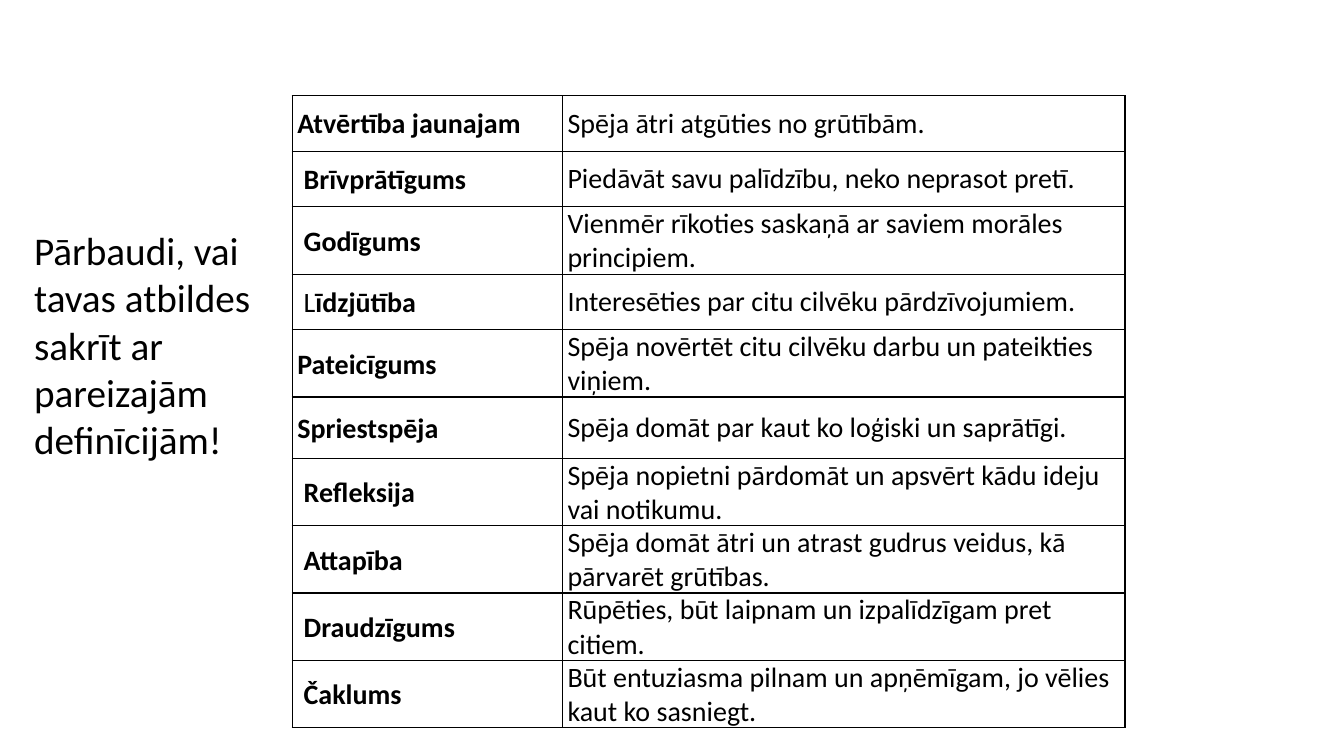
"""Build the slide that pairs ten character strengths with their definitions."""
from lxml.etree import SubElement
from pptx import Presentation
from pptx.dml.color import RGBColor
from pptx.enum.text import MSO_ANCHOR, MSO_AUTO_SIZE
from pptx.oxml.ns import qn
from pptx.util import Pt

PROMPT = "Pārbaudi, vai tavas atbildes sakrīt ar pareizajām definīcijām!"
SINGLE, MEDIUM, DOUBLE = 39.7, 43.9, 48.1
INDENT = 4.5
STRENGTHS = [
    ("", "Atvērtība jaunajam", "Spēja ātri atgūties no grūtībām.", 0, SINGLE),
    ("", "Brīvprātīgums", "Piedāvāt savu palīdzību, neko neprasot pretī.", INDENT, SINGLE),
    ("", "Godīgums", "Vienmēr rīkoties saskaņā ar saviem morāles principiem.", INDENT, DOUBLE),
    ("L", "īdzjūtība", "Interesēties par citu cilvēku pārdzīvojumiem.", INDENT, SINGLE),
    ("", "Pateicīgums", "Spēja novērtēt citu cilvēku darbu un pateikties viņiem.", 0, DOUBLE),
    ("", "Spriestspēja", "Spēja domāt par kaut ko loģiski un saprātīgi.", 0, MEDIUM),
    ("", "Refleksija", "Spēja nopietni pārdomāt un apsvērt kādu ideju vai notikumu.", INDENT, DOUBLE),
    ("", "Attapība", "Spēja domāt ātri un atrast gudrus veidus, kā pārvarēt grūtības.", INDENT, DOUBLE),
    ("", "Draudzīgums", "Rūpēties, būt laipnam un izpalīdzīgam pret citiem.", INDENT, DOUBLE),
    ("", "Čaklums", "Būt entuziasma pilnam un apņēmīgam, jo vēlies kaut ko sasniegt.", INDENT, DOUBLE),
]
COLUMNS = (193, 401.8)
COLORS = {"text": "000000", "border": "000000"}
CELL_FORMAT = {
    "vertical_anchor": MSO_ANCHOR.MIDDLE,
    "margin_left": Pt(3.6),
    "margin_right": Pt(3.6),
    "margin_top": 0,
    "margin_bottom": 0,
}
TABLE_FLAGS = {"first_row": False, "horz_banding": False}


def add_span(para, text, size, bold=False):
    """Add one formatted run to a paragraph."""
    span = para.add_run()
    span.text = text
    for name, value in {"name": "Calibri", "size": Pt(size), "bold": bold}.items():
        setattr(span.font, name, value)
    span.font.color.rgb = RGBColor.from_string(COLORS["text"])


def add_borders(cell):
    """Draw a thin line on every side of a cell."""
    properties = cell._tc.get_or_add_tcPr()
    for position, side in enumerate(("lnL", "lnR", "lnT", "lnB")):
        line = SubElement(properties, qn(f"a:{side}"), w=str(Pt(1)))
        fill = SubElement(line, qn("a:solidFill"))
        SubElement(fill, qn("a:srgbClr"), val=COLORS["border"])
        properties.insert(position, line)


def fill_cell(cell, spans, indent=0, spacing=None):
    """Format a cell and write its runs."""
    for name, value in CELL_FORMAT.items():
        setattr(cell, name, value)
    cell.fill.background()
    add_borders(cell)
    para = cell.text_frame.paragraphs[0]
    para.line_spacing = spacing
    if indent:
        para._p.get_or_add_pPr().set("marL", str(Pt(indent)))
    for text, bold in spans:
        if text:
            add_span(para, text, 20, bold)


def add_prompt(page):
    """Place the instruction to the left of the table."""
    box = page.shapes.add_textbox(Pt(17.3), Pt(158.4), Pt(179.3), Pt(177.1))
    for name, value in {"word_wrap": True, "auto_size": MSO_AUTO_SIZE.SHAPE_TO_FIT_TEXT}.items():
        setattr(box.text_frame, name, value)
    add_span(box.text_frame.paragraphs[0], PROMPT, 28)


def add_definitions(page):
    """Place the table of strengths and definitions."""
    height = sum(strength[-1] for strength in STRENGTHS)
    table = page.shapes.add_table(
        len(STRENGTHS), len(COLUMNS), Pt(208.8), Pt(68.4), Pt(sum(COLUMNS)), Pt(height)
    ).table
    for name, value in TABLE_FLAGS.items():
        setattr(table, name, value)
    for column, width in zip(table.columns, COLUMNS):
        column.width = Pt(width)
    for index, (initial, term, definition, indent, row_height) in enumerate(STRENGTHS):
        table.rows[index].height = Pt(row_height)
        spacing = 1.07 if index else None
        fill_cell(table.cell(index, 0), [(initial, False), (term, True)], indent, spacing)
        fill_cell(table.cell(index, 1), [(definition, False)])


def main():
    """Create and save the deck."""
    deck = Presentation()
    deck.slide_width, deck.slide_height = Pt(960), Pt(540)
    page = deck.slides.add_slide(deck.slide_layouts[6])
    add_prompt(page)
    add_definitions(page)
    deck.save("out.pptx")


if __name__ == "__main__":
    main()
